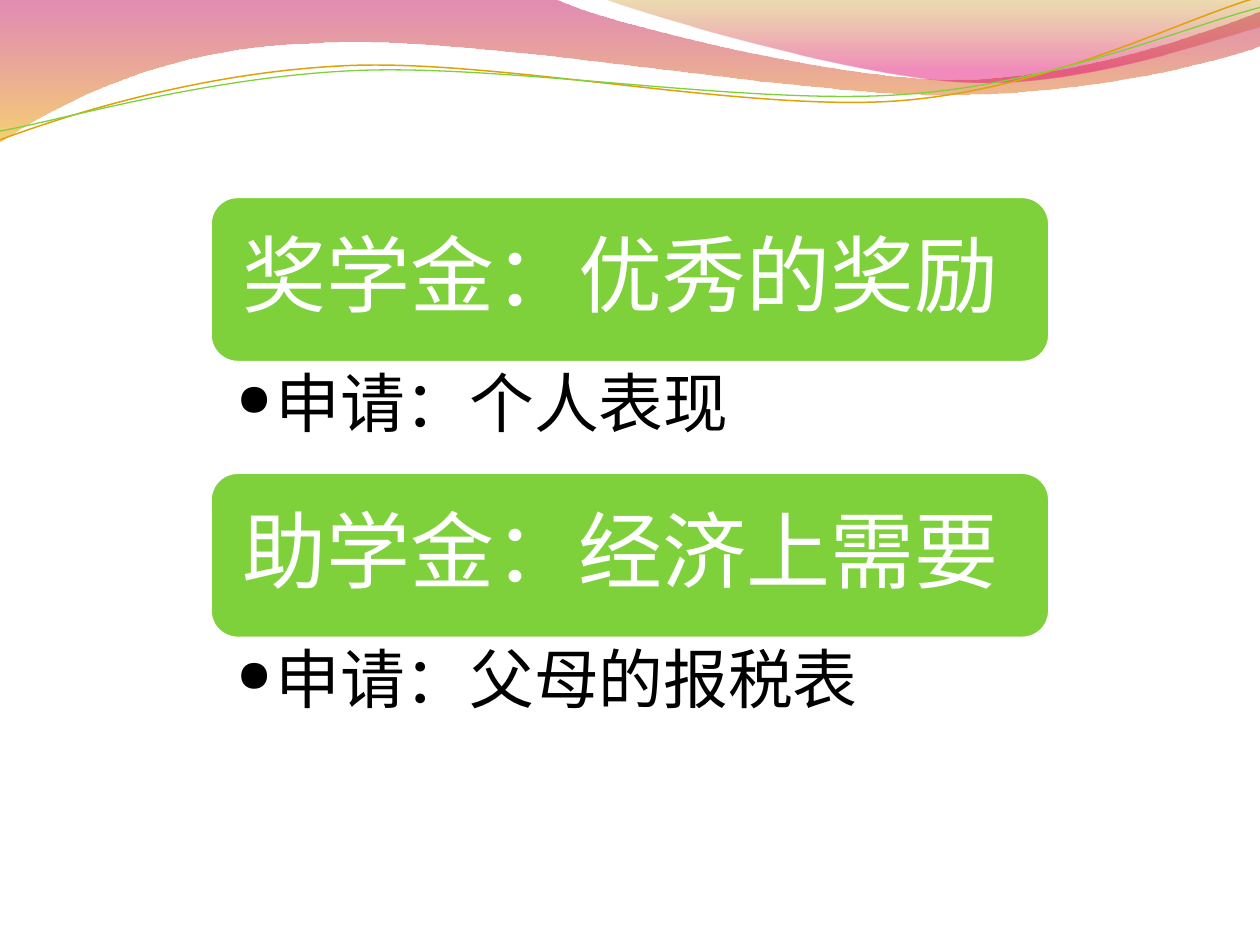
import math
from dataclasses import dataclass

from pptx import Presentation, util as u
from pptx.dml.color import RGBColor
from pptx.enum import shapes, text
from pptx.oxml import ns, xmlchemy


@dataclass(frozen=True)
class Theme:
    font: str = "TeX Gyre Pagella"
    green: str = "7FD13B"
    gold: str = "E0A209"
    white: str = "FFFFFF"
    black: str = "000000"
    heading_size: int = 48
    detail_size: int = 37
    # Gradient stops: position, colour, opacity in percent
    band: tuple = ((0, "BD0059", 45), (1, "F0AB00", 55))
    corner: tuple = ((0, "C38B00", 30), (0.8, "E1006B", 45))


THEME = Theme()
GRID = u.Cm(2.54)  # unit of the wave coordinates
WAVE_TILT = -2.7  # degrees

# Outlines: a 2-value step is straight, a 6-value one a Bezier curve
BAND = [(0, 0), (4.4, -0.01),
        (4.76, 0.17, 6.64, 0.63, 7.58, 0.63), (8.53, 0.63, 9.58, 0.26, 10, 0.09),
        (10.01, 0.36),
        (9.83, 0.44, 8.7, 0.76, 7.46, 0.75), (6.22, 0.75, 3.82, 0.28, 2.57, 0.34),
        (1.29, 0.36, 0.46, 0.83, -0.01, 1.13), (0, 0)]
CORNER = [(4.79, -0.01),
          (5.09, 0.11, 6.82, 0.62, 7.69, 0.65), (8.56, 0.69, 9.61, 0.32, 10, 0.21),
          (10, 0), (4.79, -0.01)]
GOLD_WAVE = [(0, 1.11),
             (0.48, 0.93, 1.58, 0.57, 2.77, 0.52), (3.95, 0.47, 5.93, 0.89, 7.13, 0.8),
             (8.33, 0.71, 9.38, 0.15, 9.98, -0.02)]
GREEN_WAVE = [(0, 1.04),
              (0.47, 0.96, 1.64, 0.61, 2.83, 0.56), (4.03, 0.51, 5.97, 0.84, 7.17, 0.75),
              (8.36, 0.67, 9.41, 0.21, 10, 0.06)]

AWARDS = [("奖学金：优秀的奖励", "申请：个人表现"),
          ("助学金：经济上需要", "申请：父母的报税表")]


def set_all(target, values):
    for name, value in values.items():
        setattr(target, name, value)


def rgb(value):
    return RGBColor.from_string(value)


def add_xml(parent, tag, **attributes):
    child = xmlchemy.OxmlElement(tag)
    for name, value in attributes.items():
        child.set(name, str(value))
    parent.append(child)
    return child


def turn(point, centre, degrees):
    angle = math.radians(degrees)
    x, y = point[0] - centre[0], point[1] - centre[1]
    return (centre[0] + x * math.cos(angle) - y * math.sin(angle),
            centre[1] + x * math.sin(angle) + y * math.cos(angle))


def add_outline(slide, left, top, outline, closed, tilt=0, centre=(0, 0)):
    """Draw through all control points, then join each curve's three into one."""
    points = [turn(step[i:i + 2], centre, -tilt)
              for step in outline for i in range(0, len(step), 2)]
    points = [(left + x * GRID, top + y * GRID) for x, y in points]
    builder = slide.shapes.build_freeform(*points[0])
    builder.add_line_segments(points[1:], close=closed)
    shape = builder.convert_to_shape()
    lines = iter(list(shape.element.iter(ns.qn("a:lnTo"))))
    for step in outline[1:]:
        parts = [next(lines) for _ in range(len(step) // 2)]
        if len(parts) == 3:
            curve = xmlchemy.OxmlElement("a:cubicBezTo")
            parts[0].addprevious(curve)
            for part in parts:
                curve.append(part[0])
                part.getparent().remove(part)
    shape.rotation = tilt
    shape.shadow.inherit = False
    return shape


def add_header(slide, left, top):
    # Translucent bands
    for outline, stops in ((BAND, THEME.band), (CORNER, THEME.corner)):
        band = add_outline(slide, left, top, outline, True)
        band.line.fill.background()
        band.fill.gradient()
        band.fill.gradient_angle = 270
        for stop, (position, colour, _) in zip(band.fill.gradient_stops, stops):
            stop.position = position
            stop.color.rgb = rgb(colour)
        for node, (_, _, opacity) in zip(band.element.iter(ns.qn("a:srgbClr")), stops):
            add_xml(node, "a:alpha", val=opacity * 1000)
    # Thin tilted waves
    for outline, centre, colour, width in (
            (GOLD_WAVE, (4.99, 0.58), THEME.gold, 0.85),
            (GREEN_WAVE, (5, 0.59), THEME.green, 0.75)):
        wave = add_outline(slide, left, top, outline, False, WAVE_TILT, centre)
        wave.fill.background()
        wave.line.color.rgb = rgb(colour)
        wave.line.width = u.Pt(width)


def add_words(slide, box, words, size, colour, space_after, frame_format):
    frame = slide.shapes.add_textbox(*box).text_frame
    set_all(frame, {"word_wrap": True, **frame_format})
    paragraph = frame.paragraphs[0]
    set_all(paragraph, {"line_spacing": 0.9, "alignment": text.PP_ALIGN.LEFT})
    run = paragraph.add_run()
    run.text = words
    set_all(run.font, {"name": THEME.font, "size": u.Pt(size)})
    run.font.color.rgb = rgb(colour)
    properties = paragraph._p.get_or_add_pPr()
    add_xml(add_xml(properties, "a:spcAft"), "a:spcPct", val=space_after * 1000)
    return paragraph


def add_award(slide, left, top, width, heading, detail):
    heading_height, detail_height = u.Cm(3.35), u.Cm(2.21)
    # Heading bar
    bar = slide.shapes.add_shape(shapes.MSO_SHAPE.ROUNDED_RECTANGLE,
                                 left, top, width, heading_height)
    bar.shadow.inherit = False
    bar.fill.solid()
    bar.fill.fore_color.rgb = rgb(THEME.green)
    bar.line.color.rgb = rgb(THEME.white)
    bar.line.width = u.Pt(2)
    # Heading words
    edge, inset = u.Cm(0.16), u.Cm(0.5)
    add_words(slide, (left + edge, top + edge, width - 2 * edge, heading_height - 2 * edge),
              heading, THEME.heading_size, THEME.white, 35,
              {"margin_left": inset, "margin_right": inset,
               "margin_top": inset, "margin_bottom": inset,
               "vertical_anchor": text.MSO_ANCHOR.MIDDLE})
    # Bulleted detail
    note = add_words(slide, (left, top + heading_height, width, detail_height),
                     detail, THEME.detail_size, THEME.black, 20,
                     {"margin_left": u.Cm(0.53), "margin_right": u.Cm(0.94),
                      "margin_top": u.Cm(0.18), "margin_bottom": u.Cm(0.18),
                      "vertical_anchor": text.MSO_ANCHOR.TOP})
    note.level = 1
    properties = note._p.get_or_add_pPr()
    indent = u.Cm(0.79)
    properties.set("marL", str(indent))
    properties.set("indent", str(-indent))
    add_xml(properties, "a:buFont", typeface=THEME.font)
    add_xml(properties, "a:buChar", char="•")


def main():
    deck = Presentation()
    set_all(deck, {"slide_width": u.Cm(25.4), "slide_height": u.Cm(19.05)})
    slide = deck.slides.add_slide(deck.slide_layouts[6])
    add_header(slide, 0, 0)
    width = u.Cm(16.93)
    left = (deck.slide_width - width) // 2
    for row, (heading, detail) in enumerate(AWARDS):
        add_award(slide, left, u.Cm(3.96) + row * u.Cm(5.56), width, heading, detail)
    deck.save("out.pptx")


if __name__ == "__main__":
    main()
